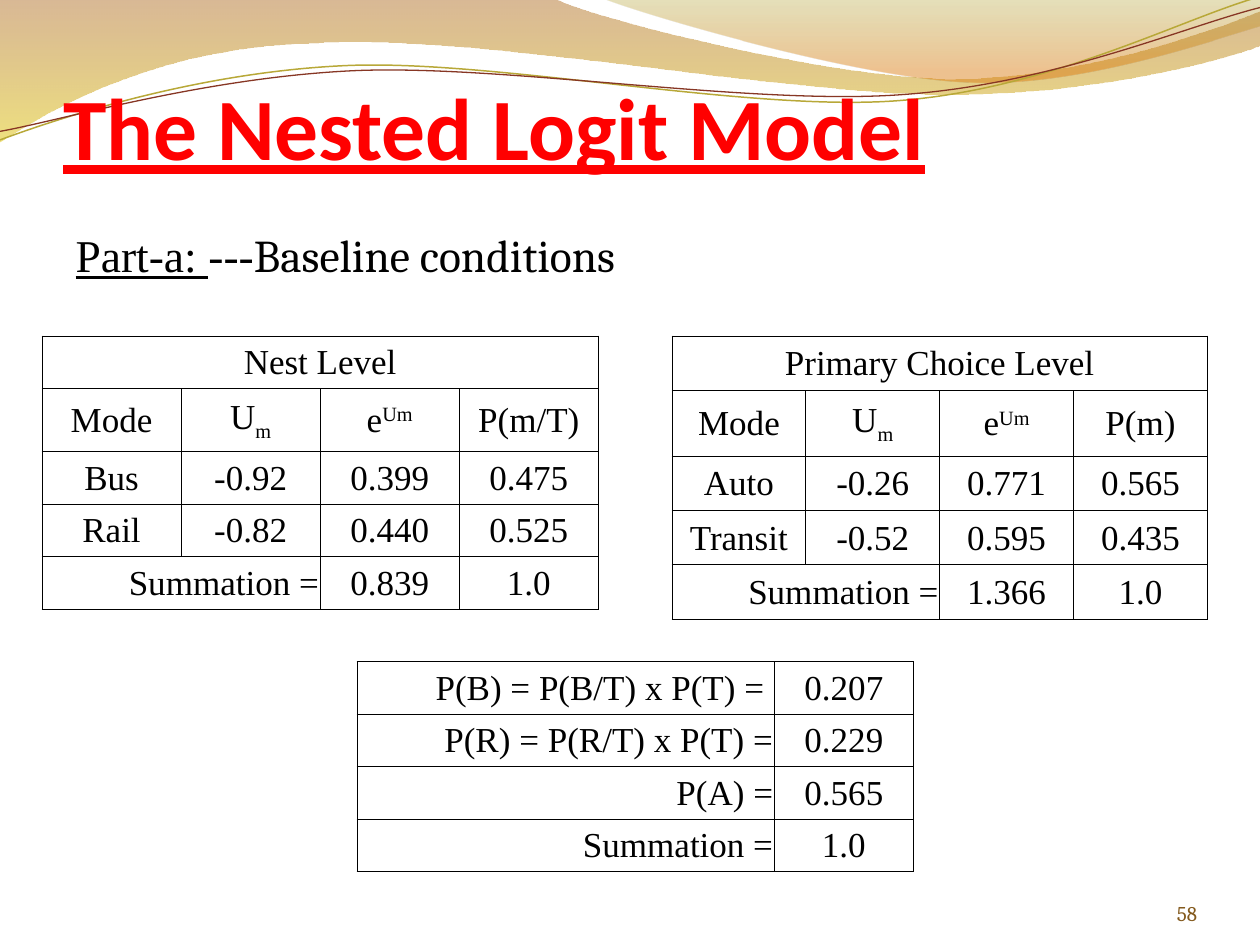
"""Build the nested logit slide with its baseline probability tables."""
from lxml.etree import SubElement
from pptx import Presentation
from pptx.dml.color import RGBColor
from pptx.enum.text import MSO_ANCHOR, MSO_AUTO_SIZE, PP_ALIGN
from pptx.oxml import parse_xml
from pptx.oxml.ns import nsdecls, qn
from pptx.util import Pt

COLORS = {
    "title": "FF0000", "text": "000000", "number": "83591C",
    "brown": "AB6415", "yellow": "E1C716", "olive": "AA991F", "orange": "DB780A",
    "gold": "B8A838", "maroon": "873624",
}
SERIF = "Times New Roman"
UTILITY = [("U", 0), ("m", -25)]
EXP_UTILITY = [("e", 0), ("Um", 30)]
CURVE_TILT = 357.3

LEFT_WAVE = [
    (0, 0), (317, -0.7),
    (343, 12, 478, 45, 546, 45), (614, 45, 690, 19, 720, 6.5), (720.5, 26),
    (708, 32, 626, 55, 537, 54), (448, 54, 275, 20, 185, 24.5),
    (93, 26, 33, 60, -0.7, 81.4),
]
RIGHT_WAVE = [
    (345, -0.7), (366, 8, 491, 45, 554, 47), (616, 50, 692, 23, 720, 15), (720, 0),
]
GOLD_CURVE = [
    (-1.4, 63), (34.2, 51.7, 114.3, 29.4, 199.4, 29.9),
    (284.4, 30.5, 425.8, 67.2, 512, 64.8), (599.2, 62.3, 676, 25.9, 720.1, 15.5),
]
MAROON_CURVE = [
    (-1.1, 58.1), (33.2, 53.7, 118.2, 32.6, 204.3, 33),
    (290.4, 33.7, 429.1, 63.8, 515.3, 61.4), (601.4, 59.4, 678.4, 30, 721.4, 21.3),
]


def add_run(p, text, size=20, font=SERIF, color="text", bold=False,
            underline=False, baseline=0):
    r = p.add_run()
    r.text = text
    f = r.font
    f.size, f.name, f.bold, f.underline = Pt(size), font, bold, underline
    f.color.rgb = RGBColor.from_string(COLORS[color])
    if baseline:
        r._r.get_or_add_rPr().set("baseline", str(baseline * 1000))
    return r


def set_frame(tf, anchor, insets):
    tf.word_wrap = True
    tf.auto_size = MSO_AUTO_SIZE.NONE
    tf.vertical_anchor = anchor
    tf.margin_left, tf.margin_top, tf.margin_right, tf.margin_bottom = map(Pt, insets)


def place(sp, left, top, width, height):
    sp.left, sp.top, sp.width, sp.height = map(Pt, (left, top, width, height))


def add_outline(slide, segments, close):
    """Add a freeform; segments of six numbers are cubic curves."""
    points = [(Pt(seg[i]), Pt(seg[i + 1])) for seg in segments
              for i in range(0, len(seg), 2)]
    builder = slide.shapes.build_freeform(*points[0])
    builder.add_line_segments(points[1:], close=close)
    sp = builder.convert_to_shape()
    sp.shadow.inherit = False
    lines = iter(list(sp.element.spPr.iter(qn("a:lnTo"))))
    for seg in segments[1:]:
        first = next(lines)
        if len(seg) == 6:
            curve = parse_xml(f'<a:cubicBezTo {nsdecls("a")}/>')
            first.addprevious(curve)
            for line in (first, next(lines), next(lines)):
                curve.append(line[0])
                line.getparent().remove(line)
    return sp


def add_wave(slide, segments, stops):
    sp = add_outline(slide, segments, True)
    sp.line.fill.background()
    gs = "".join(
        f'<a:gs pos="{pos * 1000}"><a:srgbClr val="{COLORS[color]}">'
        f'<a:alpha val="{alpha * 1000}"/></a:srgbClr></a:gs>'
        for pos, color, alpha in stops)
    grad = parse_xml(f'<a:gradFill {nsdecls("a")}><a:gsLst>{gs}</a:gsLst>'
                     '<a:lin ang="5400000" scaled="0"/></a:gradFill>')
    sp.element.spPr.find(qn("a:custGeom")).addnext(grad)


def add_curve(slide, segments, color, width):
    sp = add_outline(slide, segments, False)
    sp.rotation = CURVE_TILT
    sp.fill.background()
    sp.line.color.rgb = RGBColor.from_string(COLORS[color])
    sp.line.width = Pt(width)


def set_borders(cell):
    tcPr = cell._tc.get_or_add_tcPr()
    for i, side in enumerate("LRTB"):
        tcPr.insert(i, parse_xml(
            f'<a:ln{side} {nsdecls("a")} w="{Pt(0.5)}"><a:solidFill>'
            f'<a:srgbClr val="{COLORS["text"]}"/></a:solidFill></a:ln{side}>'))


def fill_cell(cell, content):
    runs = [(content, 0)] if isinstance(content, str) else content
    cell.vertical_anchor = MSO_ANCHOR.MIDDLE
    cell.margin_left = cell.margin_top = cell.margin_right = Pt(0.7)
    cell.margin_bottom = 0
    p = cell.text_frame.paragraphs[0]
    is_sum = runs[0][0].rstrip().endswith("=")
    p.alignment = PP_ALIGN.RIGHT if is_sum else PP_ALIGN.CENTER
    for text, baseline in runs:
        add_run(p, text, baseline=baseline)


def add_grid(slide, left, top, widths, heights, rows):
    """Add a bordered table; None continues the cell to its left."""
    frame = slide.shapes.add_table(len(rows), len(widths), Pt(left), Pt(top),
                                   Pt(sum(widths)), Pt(sum(heights)))
    table = frame.table
    table.first_row = table.horz_banding = False
    for col, width in zip(table.columns, widths):
        col.width = Pt(width)
    for row, height in zip(table.rows, heights):
        row.height = Pt(height)
    for i, row in enumerate(rows):
        for j, content in enumerate(row):
            cell = table.cell(i, j)
            cell.fill.background()
            set_borders(cell)
            if content is not None:
                fill_cell(cell, content)
                end = j
                while end + 1 < len(row) and row[end + 1] is None:
                    end += 1
                if end > j:
                    cell.merge(table.cell(i, end))


def add_level(slide, left, col_width, row_height, header_height, name, share, rows, total):
    heights = [row_height, header_height] + [row_height] * 3
    add_grid(slide, left, 192, [col_width] * 4, heights, [
        [name, None, None, None],
        ["Mode", UTILITY, EXP_UTILITY, share],
        *rows,
        ["Summation =", None, total, "1.0"],
    ])


def add_heading(slide):
    title, body = slide.shapes.title, slide.placeholders[1]
    for sp in (title, body):
        sp.element.getparent().append(sp.element)
    place(title, 36, 12, 648, 90)
    set_frame(title.text_frame, MSO_ANCHOR.BOTTOM, (0, 3.6, 0, 0))
    p = title.text_frame.paragraphs[0]
    p.alignment = PP_ALIGN.LEFT
    add_run(p, "The Nested Logit Model", size=50, font="Calibri", color="title",
            bold=True, underline=True)

    place(body, 36, 126, 666, 48)
    set_frame(body.text_frame, MSO_ANCHOR.TOP, (7.2, 3.6, 7.2, 3.6))
    p = body.text_frame.paragraphs[0]
    pPr = p._p.get_or_add_pPr()
    pPr.set("marL", "0")
    pPr.set("indent", "0")
    SubElement(pPr, qn("a:buNone"))
    p.space_before = Pt(0)
    add_run(p, "Part-a: ", size=26, underline=True)
    add_run(p, "---", size=26)
    add_run(p, "Baseline conditions", size=26, font="Cambria")


def add_number(slide, text):
    sp = slide.shapes.add_textbox(Pt(624), Pt(500.4), Pt(60), Pt(28.8))
    set_frame(sp.text_frame, MSO_ANCHOR.BOTTOM, (0, 0, 0, 0))
    p = sp.text_frame.paragraphs[0]
    p.alignment = PP_ALIGN.RIGHT
    add_run(p, text, size=12, font="Cambria", color="number")


def main():
    prs = Presentation()
    prs.slide_width, prs.slide_height = Pt(720), Pt(540)
    slide = prs.slides.add_slide(prs.slide_layouts[1])
    add_wave(slide, LEFT_WAVE, [(0, "brown", 45), (100, "yellow", 55)])
    add_wave(slide, RIGHT_WAVE, [(0, "olive", 30), (80, "orange", 45)])
    add_curve(slide, GOLD_CURVE, "gold", 0.85)
    add_curve(slide, MAROON_CURVE, "maroon", 0.75)
    add_number(slide, "58")
    add_heading(slide)
    add_level(slide, 24, 79.5, 30, 36, "Nest Level", "P(m/T)", [
        ["Bus", "-0.92", "0.399", "0.475"],
        ["Rail", "-0.82", "0.440", "0.525"],
    ], "0.839")
    add_level(slide, 384, 76.5, 31.12, 37.5, "Primary Choice Level", "P(m)", [
        ["Auto", "-0.26", "0.771", "0.565"],
        ["Transit", "-0.52", "0.595", "0.435"],
    ], "1.366")
    add_grid(slide, 204, 378, [238.5, 79.5], [30] * 4, [
        ["P(B) = P(B/T) x P(T) = ", "0.207"],
        ["P(R) = P(R/T) x P(T) =", "0.229"],
        ["P(A) =", "0.565"],
        ["Summation =", "1.0"],
    ])
    prs.save("out.pptx")


if __name__ == "__main__":
    main()
